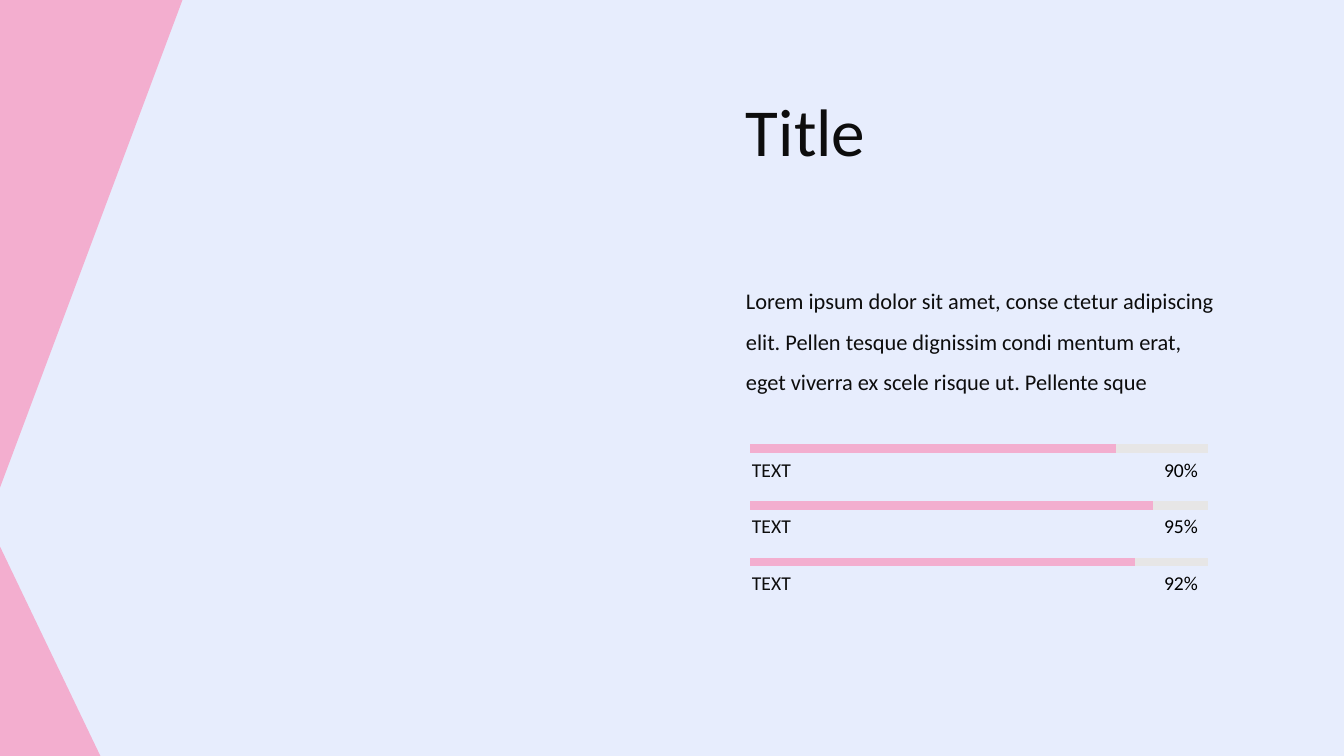
from pptx import Presentation
from pptx.dml.color import RGBColor
from pptx.enum.shapes import MSO_CONNECTOR as Line, MSO_SHAPE as Shape
from pptx.enum.text import MSO_AUTO_SIZE as Fit, PP_ALIGN as Align
from pptx.oxml.ns import qn
from pptx.util import Inches, Pt
from lxml.etree import SubElement

WIDE, HIGH = 13.33, 7.5
PINK, GREY, INK, BLACK, SKY = "F3AECF", "E7E6E6", "0D0D0D", "000000", "E7EDFD"
BODY = ("Lorem ipsum dolor sit amet, conse ctetur adipiscing elit. "
        "Pellen tesque dignissim condi mentum erat, "
        "eget viverra ex scele risque ut. Pellente sque")
RATES = [("TEXT", "90%", 0.8), ("TEXT", "95%", 0.88), ("TEXT", "92%", 0.84)]


def paint(part, tint):
    part.solid()
    part.fore_color.rgb = RGBColor.from_string(tint)


def write(slide, box, words, size, tint=INK, align=Align.LEFT, lead=1.0):
    frame = slide.shapes.add_textbox(*map(Inches, box)).text_frame
    frame.word_wrap = True
    frame.auto_size = Fit.SHAPE_TO_FIT_TEXT
    para = frame.paragraphs[0]
    para.alignment = align
    para.line_spacing = lead
    run = para.add_run()
    run.text = words
    run.font.name = "Calibri"
    run.font.size = Pt(size)
    run.font.color.rgb = RGBColor.from_string(tint)


def wedge(slide, box, flip=False):
    shape = slide.shapes.add_shape(Shape.RIGHT_TRIANGLE, *map(Inches, box))
    shape.shadow.inherit = False
    paint(shape.fill, PINK)
    shape.line.fill.background()
    if flip:
        shape.element.spPr.get_or_add_xfrm().set("flipV", "1")


def stroke(slide, left, top, width, tint):
    ends = map(Inches, (left, top, left + width, top))
    line = slide.shapes.add_connector(Line.STRAIGHT, *ends)
    paint(line.line.fill, tint)
    line.line.width = Pt(6)
    SubElement(line.element.spPr, qn("a:effectLst"))


def edge(slide, box):
    left, top, width, height = box
    wedge(slide, (left, top, width, height * 0.645), flip=True)
    low = height * 0.277
    wedge(slide, (left, top + height - low, width * 0.55, low))


def intro(slide, box):
    left, top, width, height = box
    write(slide, (left, top, width * 0.78, height * 0.29), "Title", 48)
    write(slide, (left, top + height * 0.59, width, height * 0.41), BODY, 16, lead=1.5)


def meters(slide, box):
    left, top, width, height = box
    step = height / len(RATES)
    for row, (label, rate, share) in enumerate(RATES):
        y = top + row * step
        stroke(slide, left, y, width, GREY)
        stroke(slide, left, y, width * share, PINK)
        write(slide, (left - 0.08, y + 0.04, width * 0.26, 0.37), label, 14)
        cell = width * 0.16
        write(slide, (left + width - cell, y + 0.04, cell, 0.37),
              rate, 14, BLACK, Align.RIGHT)


def main():
    deck = Presentation()
    deck.slide_width, deck.slide_height = Inches(WIDE), Inches(HIGH)
    slide = deck.slides.add_slide(deck.slide_layouts[6])
    paint(slide.background.fill, SKY)
    edge(slide, (0, 0, 1.81, HIGH))
    intro(slide, (7.3, 0.84, 4.86, 3.1))
    meters(slide, (7.44, 4.45, 4.54, 1.69))
    deck.save("out.pptx")


if __name__ == "__main__":
    main()
